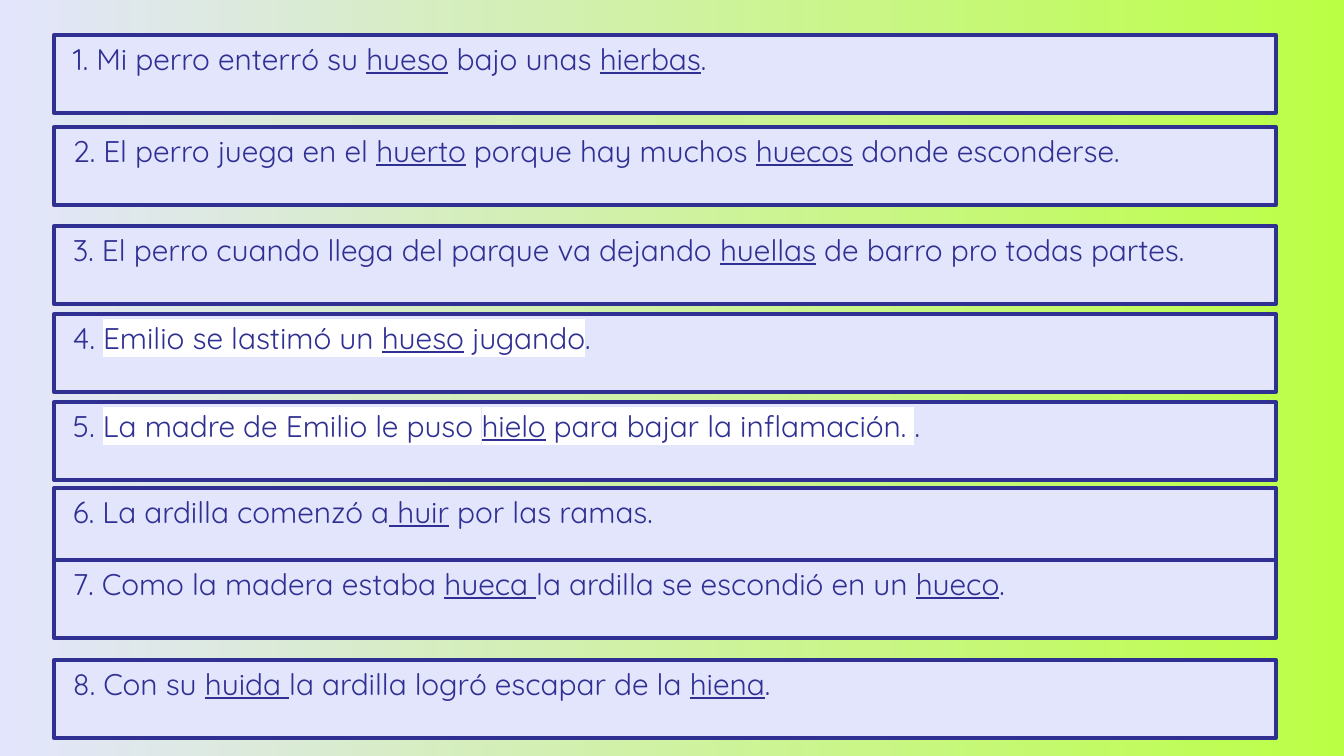
from lxml.etree import SubElement
from pptx import Presentation
from pptx.dml.color import RGBColor
from pptx.enum.shapes import MSO_SHAPE
from pptx.enum.text import MSO_ANCHOR, PP_ALIGN
from pptx.oxml.ns import qn
from pptx.util import Pt

EMU_PER_PX = 914400 / 134.4
COLORS = {"lavender": "E3E5FD", "lime": "BBFF45", "indigo": "303093", "white": "FFFFFF"}
FONT = "Quicksand"

PLAIN, UNDERLINE, MARKED, MARKED_UNDERLINE = (
    (False, False), (True, False), (False, True), (True, True))

LEFT, WIDTH, HEIGHT, INDENT = 54, 1222, 78, 19

# Top edge of each box and the spans of its sentence
SENTENCES = [
    (35, [("1. Mi perro enterró su ", PLAIN), ("hueso", UNDERLINE),
          (" bajo unas ", PLAIN), ("hierbas", UNDERLINE), (".", PLAIN)]),
    (127, [("2. El perro juega en el ", PLAIN), ("huerto", UNDERLINE),
           (" porque hay muchos ", PLAIN), ("huecos", UNDERLINE),
           (" donde esconderse.", PLAIN)]),
    (226, [("3. El perro cuando llega del parque va dejando ", PLAIN),
           ("huellas", UNDERLINE), (" de barro pro todas partes.", PLAIN)]),
    (314, [("4. ", PLAIN), ("Emilio se lastimó un ", MARKED),
           ("hueso", MARKED_UNDERLINE), (" jugando", MARKED), (".", PLAIN)]),
    (402, [("5. ", PLAIN), ("La madre de Emilio le puso ", MARKED),
           ("hielo", MARKED_UNDERLINE),
           (" para bajar la inflamación. ", MARKED), (".", PLAIN)]),
    (488, [("6. La ardilla comenzó a", PLAIN), (" huir", UNDERLINE),
           (" por las ramas.", PLAIN)]),
    (560, [("7. Como la madera estaba ", PLAIN), ("hueca ", UNDERLINE),
           ("la ardilla se escondió en un ", PLAIN), ("hueco", UNDERLINE),
           (".", PLAIN)]),
    (660, [("8. Con su ", PLAIN), ("huida ", UNDERLINE),
           ("la ardilla logró escapar de la ", PLAIN), ("hiena", UNDERLINE),
           (".", PLAIN)]),
]


def px(length):
    return round(length * EMU_PER_PX)


def color(name):
    return RGBColor.from_string(COLORS[name])


class SlidePainter:
    """Holds the text style and the current slide."""

    def __init__(self, page, font=FONT, size=16, ink="indigo"):
        self.page = page
        self.font = font
        self.size = size
        self.ink = ink

    def background(self, start, end):
        fill = self.page.background.fill
        fill.gradient()
        fill.gradient_angle = 0
        for stop, name in zip(fill.gradient_stops, (start, end)):
            stop.color.rgb = color(name)

    def sentence_box(self, top, spans):
        box = self.page.shapes.add_shape(
            MSO_SHAPE.RECTANGLE, px(LEFT), px(top), px(WIDTH), px(HEIGHT))
        box.shadow.inherit = False
        box.fill.solid()
        box.fill.fore_color.rgb = color("lavender")
        box.line.color.rgb = color(self.ink)
        box.line.width = Pt(2)
        SubElement(box.line._get_or_add_ln(), qn("a:round"))

        frame = box.text_frame
        frame.word_wrap = True
        frame.vertical_anchor = MSO_ANCHOR.TOP
        frame.margin_left = frame.margin_right = 0
        frame.margin_top = frame.margin_bottom = 0
        para = frame.paragraphs[0]
        para.alignment = PP_ALIGN.LEFT
        para.line_spacing = 1.15
        properties = para._p.get_or_add_pPr()
        properties.set("marL", str(px(INDENT)))
        properties.set("indent", "0")
        for text, style in spans:
            self.span(para, text, *style)

    def span(self, para, text, underlined, marked):
        span = para.add_run()
        span.text = text
        span.font.size = Pt(self.size)
        span.font.underline = underlined
        span.font.color.rgb = color(self.ink)
        if marked:
            highlight = SubElement(span._r.get_or_add_rPr(), qn("a:highlight"))
            SubElement(highlight, qn("a:srgbClr"), val=COLORS["white"])
        span.font.name = self.font


def main():
    deck = Presentation()
    deck.slide_width, deck.slide_height = px(1344), px(756)
    painter = SlidePainter(deck.slides.add_slide(deck.slide_layouts[6]))
    painter.background("lavender", "lime")
    for top, spans in SENTENCES:
        painter.sentence_box(top, spans)
    deck.save("out.pptx")


if __name__ == "__main__":
    main()
